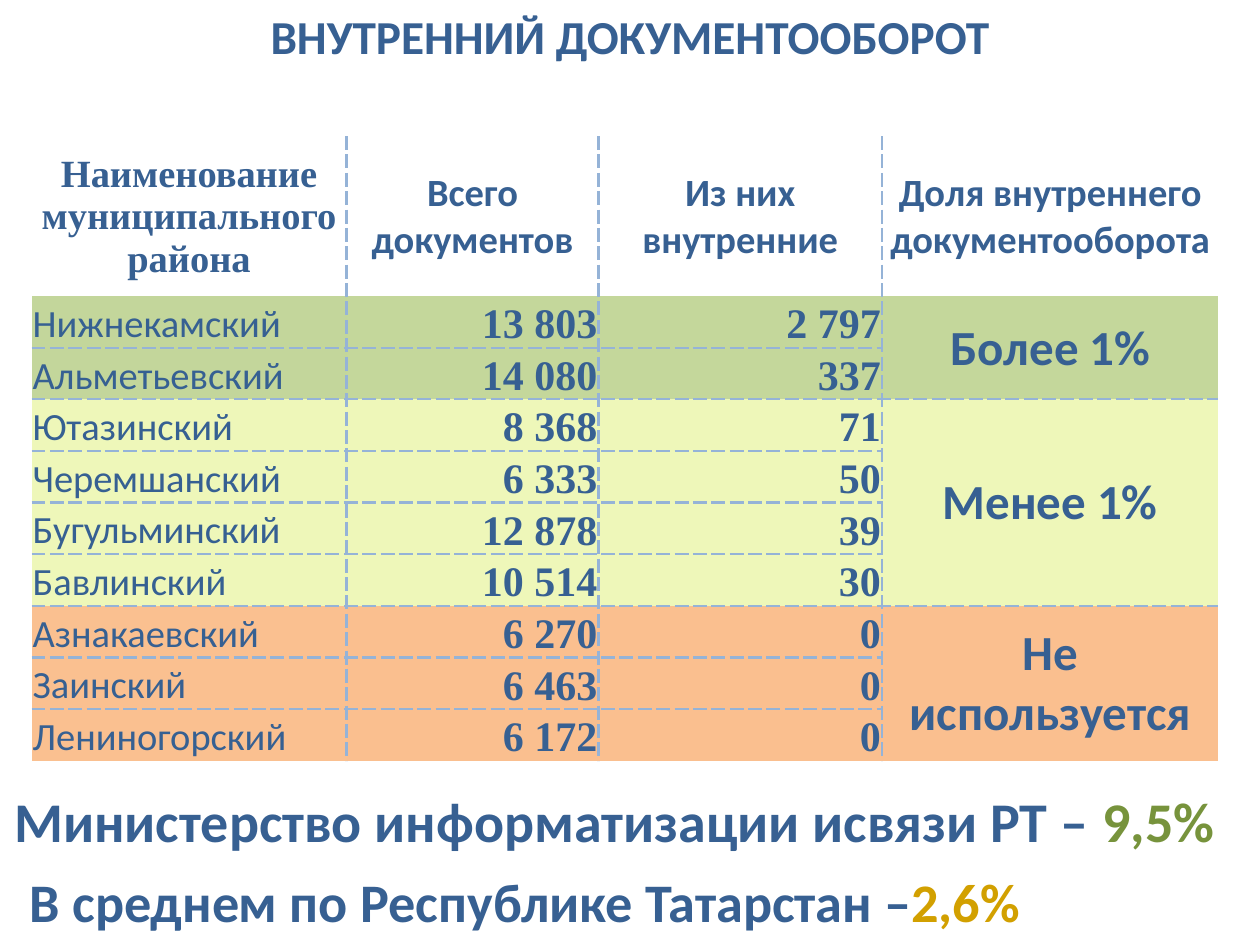
from typing import Any, NamedTuple

from pptx import Presentation
from pptx.dml.color import RGBColor
from pptx.enum.text import MSO_ANCHOR as Anchor, MSO_AUTO_SIZE as AutoSize, PP_ALIGN as Align
from pptx.oxml import parse_xml
from pptx.oxml.ns import nsdecls
from pptx.util import Pt

SCALE = 9144
BLUE, NAME_BLUE, BORDER = "376092", "366092", "95B3D7"
PLAIN_STYLE = "{2D5ABB26-0587-4C30-8999-92F81FD0307C}"
COLUMNS = (250, 200, 225, 267)
HEADER_HEIGHT, ROW_HEIGHT = 127, 41


class Style(NamedTuple):
    size: int
    font: str = "Calibri"
    color: str = BLUE
    bold: bool = True
    align: Any = Align.CENTER
    anchor: Any = Anchor.MIDDLE


class Group(NamedTuple):
    share: str
    name_fill: str
    fill: str
    districts: tuple[tuple[str, str, str], ...]


class Summary(NamedTuple):
    box: tuple[int, int, int, int]
    size: int
    label: str
    value: str
    color: str


SERIF_HEADER = Style(22, "Times New Roman")
HEADER = Style(22)
NAME = Style(22, color=NAME_BLUE, bold=False, align=Align.LEFT, anchor=Anchor.BOTTOM)
NUMBER = Style(24, "Times New Roman", align=Align.RIGHT, anchor=Anchor.BOTTOM)
SHARE = Style(28)

HEADERS = (
    ("Наименование муниципального района", SERIF_HEADER),
    ("Всего документов", HEADER),
    ("Из них внутренние", HEADER),
    ("Доля внутреннего документооборота", HEADER),
)
GROUPS = (
    Group("Более 1%", "C3D69B", "C4D79B", (
        ("Нижнекамский", "13 803", "2 797"),
        ("Альметьевский", "14 080", "337"),
    )),
    Group("Менее 1%", "EEF7B9", "EEF7B9", (
        ("Ютазинский", "8 368", "71"),
        ("Черемшанский", "6 333", "50"),
        ("Бугульминский", "12 878", "39"),
        ("Бавлинский", "10 514", "30"),
    )),
    Group("Не используется", "FAC090", "FABF8F", (
        ("Азнакаевский", "6 270", "0"),
        ("Заинский", "6 463", "0"),
        ("Лениногорский", "6 172", "0"),
    )),
)
SUMMARIES = (
    Summary((0, 684, 833, 64), 31, "В среднем по Республике Татарстан –", "2,6%", "D2A000"),
    Summary((0, 619, 975, 64), 32, "Министерство информатизации исвязи РТ – ", "9,5%", "77933C"),
)


def px(length: int) -> int:
    return length * SCALE


def rgb(color: str) -> RGBColor:
    return RGBColor.from_string(color)


def apply(target: Any, values: dict[str, Any]) -> None:
    for name, value in values.items():
        setattr(target, name, value)


def place(shape: Any, box: tuple[int, int, int, int]) -> None:
    apply(shape, dict(zip(("left", "top", "width", "height"), map(px, box))))


def add_run(paragraph: Any, text: str, style: Style) -> None:
    run = paragraph.add_run()
    run.text = text
    apply(run.font, {"size": Pt(style.size), "name": style.font, "bold": style.bold})
    run.font.color.rgb = rgb(style.color)
    paragraph.alignment = style.align


def add_border(cell: Any, side: str) -> None:
    cell._tc.get_or_add_tcPr().append(parse_xml(
        f'<a:ln{side} {nsdecls("a")} w="{Pt(1.5)}"><a:solidFill><a:srgbClr val="{BORDER}"/>'
        f'</a:solidFill><a:prstDash val="sysDash"/></a:ln{side}>'
    ))


def format_cell(cell: Any, text: str, style: Style, fill: str, sides: str) -> None:
    for side in sides:
        add_border(cell, side)
    cell.fill.solid()
    cell.fill.fore_color.rgb = rgb(fill)
    apply(cell, {
        "margin_left": px(1), "margin_right": px(1), "margin_top": px(1),
        "margin_bottom": 0, "vertical_anchor": style.anchor,
    })
    add_run(cell.text_frame.paragraphs[0], text, style)


def edges(column: int, first: int, last: int, row_count: int) -> str:
    """Return the inner sides of a cell that covers the rows first to last."""
    inner = {
        "L": column > 0,
        "R": column < len(COLUMNS) - 1,
        "T": first > 1,
        "B": 0 < last < row_count - 1,
    }
    return "".join(side for side, shown in inner.items() if shown)


def add_title(slide: Any, text: str) -> None:
    title = slide.shapes.title
    place(title, (0, 0, 1000, 56))
    apply(title.text_frame, {
        "auto_size": AutoSize.NONE, "word_wrap": True, "vertical_anchor": Anchor.MIDDLE,
    })
    add_run(title.text_frame.paragraphs[0], text, Style(27))


def add_district_table(slide: Any) -> None:
    row_count = 1 + sum(len(group.districts) for group in GROUPS)
    height = HEADER_HEIGHT + ROW_HEIGHT * (row_count - 1)
    frame = slide.shapes.add_table(
        row_count, len(COLUMNS), px(25), px(108), px(sum(COLUMNS)), px(height)
    )
    table = frame.table
    apply(table, {"first_row": False, "horz_banding": False})
    table._tbl.tblPr[0].text = PLAIN_STYLE
    for column, width in zip(table.columns, COLUMNS):
        column.width = px(width)
    for index, row in enumerate(table.rows):
        row.height = px(ROW_HEIGHT if index else HEADER_HEIGHT)
    for column, (text, style) in enumerate(HEADERS):
        format_cell(table.cell(0, column), text, style, "FFFFFF", edges(column, 0, 0, row_count))
    first = 1
    share_column = len(COLUMNS) - 1
    for group in GROUPS:
        last = first + len(group.districts) - 1
        for row, district in enumerate(group.districts, first):
            for column, text in enumerate(district):
                style, fill = (NUMBER, group.fill) if column else (NAME, group.name_fill)
                sides = edges(column, row, row, row_count)
                format_cell(table.cell(row, column), text, style, fill, sides)
        share_cell = table.cell(first, share_column)
        share_cell.merge(table.cell(last, share_column))
        sides = edges(share_column, first, last, row_count)
        format_cell(share_cell, group.share, SHARE, group.fill, sides)
        first = last + 1


def add_summary(slide: Any, summary: Summary) -> None:
    shape = slide.shapes.add_textbox(*map(px, summary.box))
    apply(shape.text_frame, {"word_wrap": False, "auto_size": AutoSize.SHAPE_TO_FIT_TEXT})
    paragraph = shape.text_frame.paragraphs[0]
    add_run(paragraph, summary.label, Style(summary.size))
    add_run(paragraph, summary.value, Style(summary.size, color=summary.color))


def main() -> None:
    presentation = Presentation()
    apply(presentation, {"slide_width": px(1000), "slide_height": px(750)})
    slide = presentation.slides.add_slide(presentation.slide_layouts[5])
    add_title(slide, "ВНУТРЕННИЙ ДОКУМЕНТООБОРОТ")
    add_district_table(slide)
    for summary in SUMMARIES:
        add_summary(slide, summary)
    presentation.save("out.pptx")


if __name__ == "__main__":
    main()
